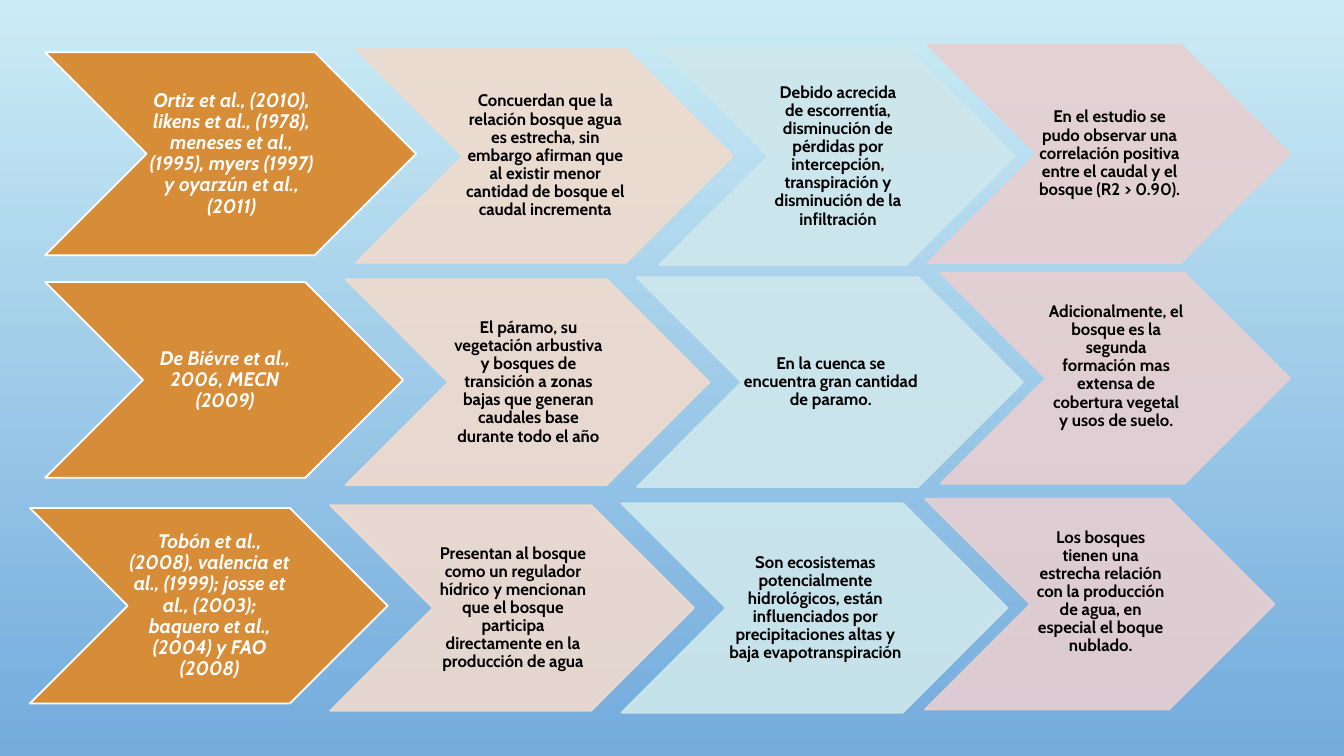
from lxml.etree import SubElement
from pptx import Presentation
from pptx.dml.color import RGBColor
from pptx.enum.shapes import MSO_SHAPE as Shape
from pptx.enum.text import MSO_ANCHOR as Anchor, PP_ALIGN as Align
from pptx.oxml.ns import qn
from pptx.util import Cm, Pt

COLORS = {
    "sky": "CBECF5", "water": "73ABDD", "white": "FFFFFF", "black": "000000",
    "orange": "D78D38", "peach": "F0DBCE", "mint": "CEE7EC", "rose": "E7CFD1",
}
FONT = "Cabin"
FILLS = ["orange", "peach", "mint", "rose"]

TOP_FRAMES = [
    (1.14, 1.32, 9.35, 5.11), (8.97, 1.24, 9.5, 5.38),
    (16.61, 1.19, 8.97, 5.49), (23.37, 1.12, 9.14, 5.51),
]
LOWER_FRAMES = [
    (1.14, 7.11, 9.02, 4.93), (8.71, 7.04, 9.17, 5.18),
    (16.05, 6.99, 9.73, 5.28), (23.7, 6.88, 8.81, 5.31),
]
BOTTOM_SHIFT = (-0.39, 5.69)
LIFT = 0.61

ROWS = [
    (TOP_FRAMES, (0, 0), 0, [
        "Ortiz et al., (2010), likens et al., (1978), meneses et al., (1995), myers (1997) y oyarzún et al., (2011)",
        "Concuerdan que la relación bosque agua es estrecha, sin embargo afirman que al existir menor cantidad de bosque el caudal incrementa",
        "Debido acrecida de escorrentía, disminución de pérdidas por intercepción, transpiración y disminución de la infiltración",
        "En el estudio se pudo observar una correlación positiva entre el caudal y el bosque (R2 > 0.90).",
    ]),
    (LOWER_FRAMES, (0, 0), LIFT, [
        "De Biévre et al., 2006, MECN (2009)",
        "El páramo, su vegetación arbustiva y bosques de transición a zonas bajas que generan caudales base durante todo el año",
        "En la cuenca se encuentra gran cantidad de paramo.",
        "Adicionalmente, el bosque es la segunda formación mas extensa de cobertura vegetal y usos de suelo.",
    ]),
    (LOWER_FRAMES, BOTTOM_SHIFT, LIFT, [
        "Tobón et al., (2008), valencia et al., (1999); josse et al., (2003); baquero et al., (2004) y FAO (2008)",
        "Presentan al bosque como un regulador hídrico y mencionan que el bosque participa directamente en la producción de agua",
        "Son ecosistemas potencialmente hidrológicos, están influenciados por precipitaciones altas y baja evapotranspiración",
        "Los bosques tienen una estrecha relación con la producción de agua, en especial el boque nublado.",
    ]),
]


def rgb(name):
    return RGBColor.from_string(COLORS[name])


def paint_background(page):
    fill = page.background.fill
    fill.gradient()
    fill.gradient_angle = 270
    for stop, name in zip(fill.gradient_stops, ("sky", "water")):
        stop.color.rgb = rgb(name)


def add_chevron(group, frame, fill, is_source):
    chevron = group.shapes.add_shape(Shape.CHEVRON, *map(Cm, frame))
    chevron.shadow.inherit = False
    chevron.fill.solid()
    chevron.fill.fore_color.rgb = rgb(fill)
    chevron.line.color.rgb = rgb("white" if is_source else fill)
    chevron.line.width = Pt(1.25)
    if not is_source:
        for color in chevron._element.spPr.iter(qn("a:srgbClr")):
            SubElement(color, qn("a:alpha"), val="90000")


def add_label(group, frame, text, is_source, lift):
    left, top, width, height = frame
    box = group.shapes.add_textbox(Cm(left + height / 2), Cm(top), Cm(width - height), Cm(height))
    text_frame = box.text_frame
    text_frame.word_wrap = True
    text_frame.vertical_anchor = Anchor.MIDDLE
    text_frame.margin_left, text_frame.margin_right = Cm(0.05), 0
    text_frame.margin_top, text_frame.margin_bottom = Cm(0.03), Cm(0.03 + lift)
    size = 14 if is_source else 12
    para = text_frame.paragraphs[0]
    para.text = text
    para.alignment = Align.CENTER
    para.line_spacing = 0.9
    para.space_after = Pt(0.35 * size)
    font = para.font
    font.name, font.size, font.bold, font.italic = FONT, Pt(size), True, is_source
    font.color.rgb = rgb("white" if is_source else "black")


def main():
    deck = Presentation()
    deck.slide_width, deck.slide_height = Cm(33.87), Cm(19.05)
    page = deck.slides.add_slide(deck.slide_layouts[6])
    paint_background(page)
    for frames, (shift_x, shift_y), last_lift, texts in ROWS:
        group = page.shapes.add_group_shape()
        for column, (frame, fill, text) in enumerate(zip(frames, FILLS, texts)):
            left, top, width, height = frame
            place = (left + shift_x, top + shift_y, width, height)
            is_source = column == 0
            lift = last_lift if column == len(FILLS) - 1 else 0
            add_chevron(group, place, fill, is_source)
            add_label(group, place, text, is_source, lift)
    deck.save("out.pptx")


if __name__ == "__main__":
    main()
